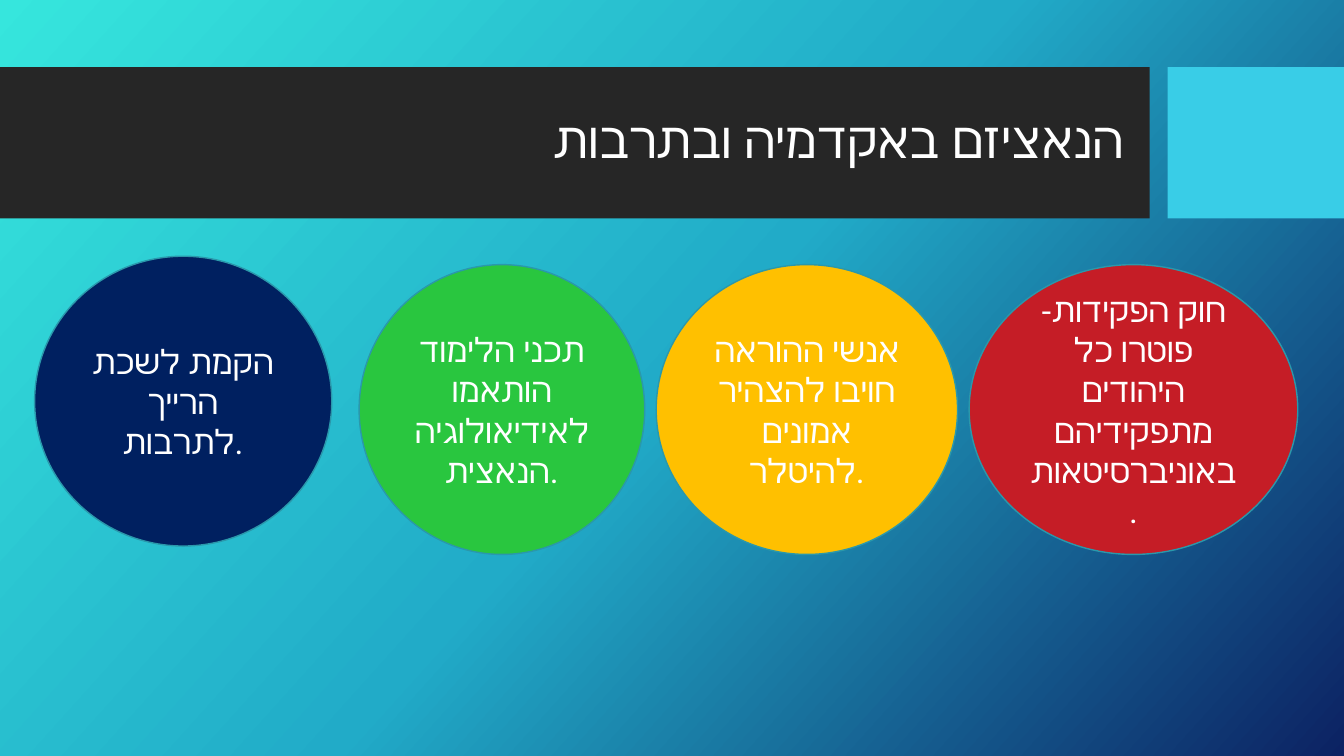
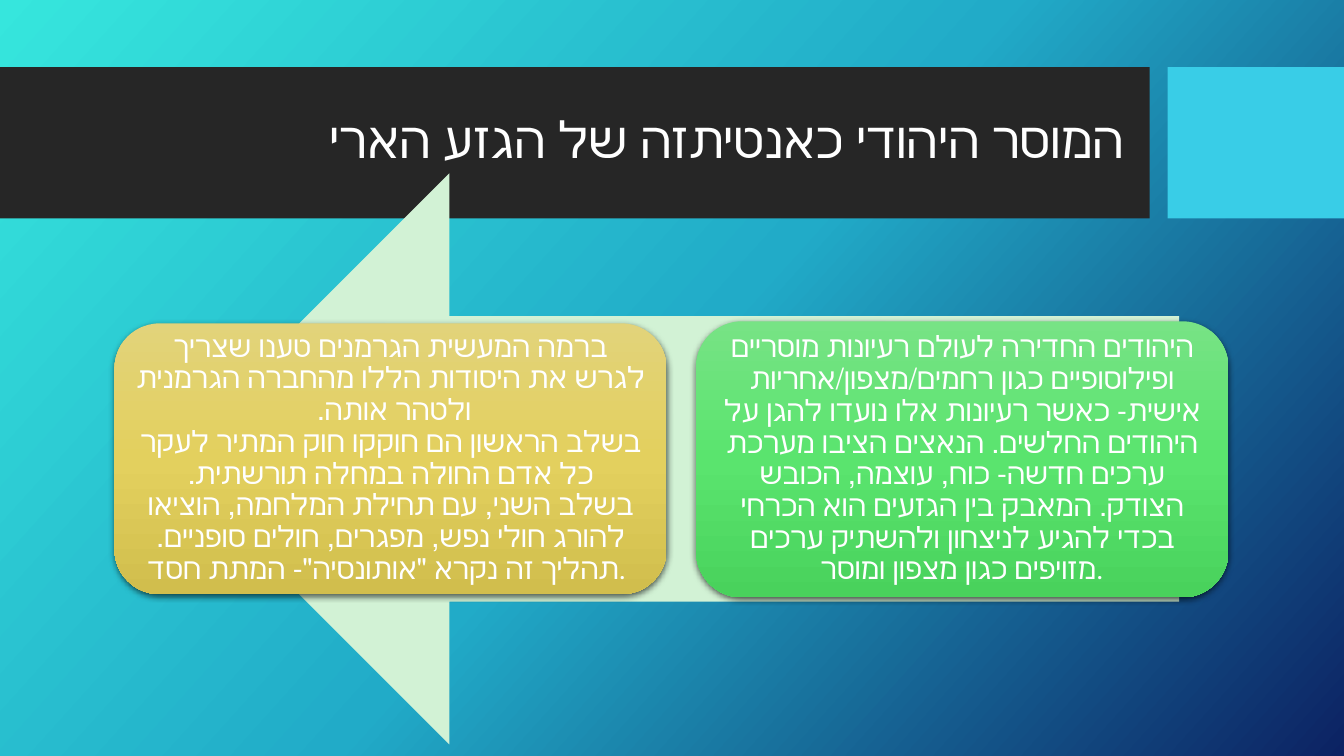
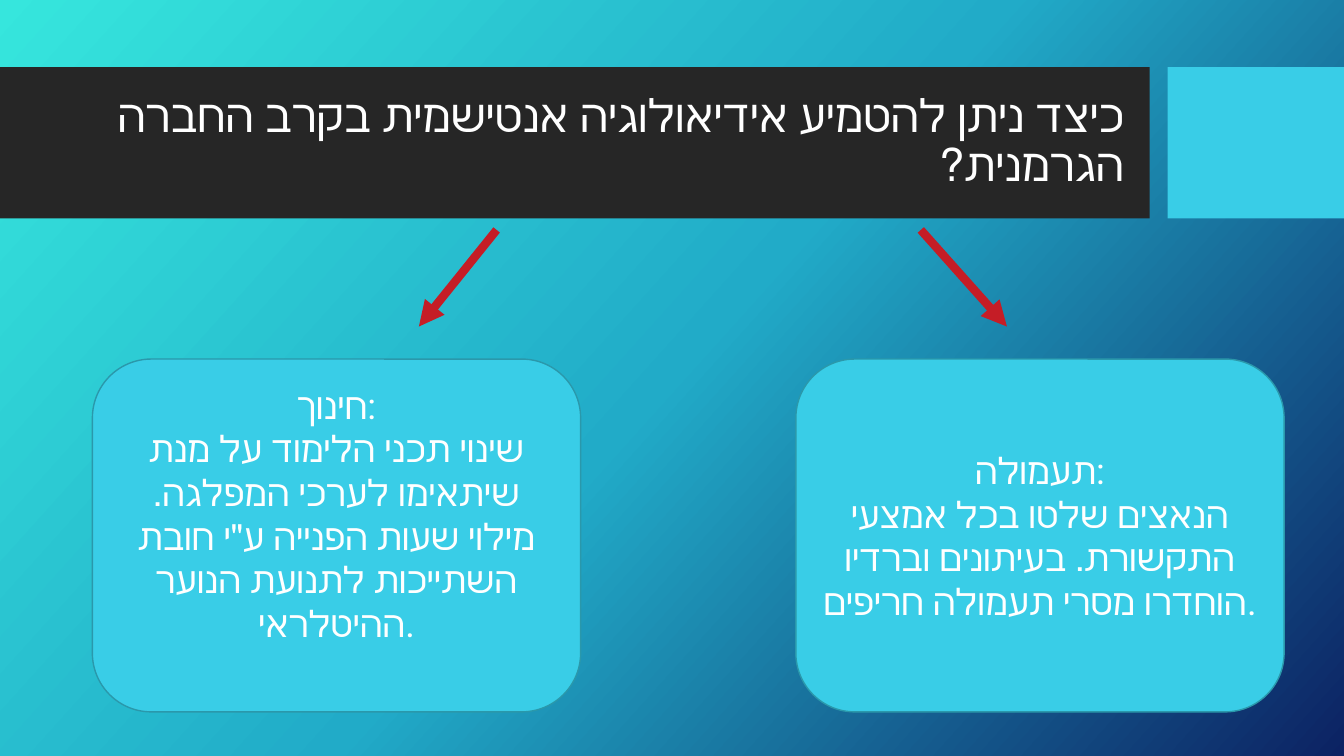
import copy
import pptx
import pptx.util
import pptx.dml.color
import pptx.enum.shapes
import pptx.enum.text
import pptx.oxml
import pptx.oxml.ns
import lxml.etree

RGB = pptx.dml.color.RGBColor
KIND = pptx.enum.shapes.MSO_SHAPE
ALIGN = pptx.enum.text.PP_ALIGN
MIDDLE = pptx.enum.text.MSO_ANCHOR.MIDDLE
qn = pptx.oxml.ns.qn

PX = 9525
FONT = "Roboto"
WHITE = RGB(0xFF, 0xFF, 0xFF)
DARK = RGB(0x26, 0x26, 0x26)
SKY = RGB(0x39, 0xCD, 0xE7)
TEAL = RGB(0x2A, 0x98, 0xAB)
RED = RGB(0xC5, 0x1D, 0x26)
AMBER = RGB(0xFF, 0xC0, 0x00)
GREEN = RGB(0x29, 0xC6, 0x3F)
NAVY = RGB(0x00, 0x20, 0x60)
MINT = RGB(0xD2, 0xF2, 0xD5)
BACK = [RGB(0x36, 0xE6, 0xDD), RGB(0x21, 0xAB, 0xC8), RGB(0x0C, 0x22, 0x63)]
LIME = [RGB(0x77, 0xE3, 0x85), RGB(0x5A, 0xE4, 0x6E), RGB(0x49, 0xD2, 0x5C)]
GOLD = [RGB(0xE2, 0xD3, 0x7A), RGB(0xE3, 0xD0, 0x5E), RGB(0xD1, 0xBE, 0x4D)]

BANDS = [((0, 64, 1095, 144), DARK), ((1112, 64, 168, 144), SKY)]
TITLE = (71, 79, 1009, 113)

CULTURE = ("הנאציזם באקדמיה ובתרבות", 36)
DISCS = [
    ((923, 252, 313, 276), RED,
     "חוק הפקידות- פוטרו כל היהודים מתפקידיהם באוניברסיטאות."),
    ((625, 252, 287, 276), AMBER,
     "אנשי ההוראה חויבו להצהיר אמונים להיטלר."),
    ((342, 252, 272, 276), GREEN,
     "תכני הלימוד הותאמו לאידיאולוגיה הנאצית."),
    ((33, 244, 283, 276), NAVY,
     "הקמת לשכת הרייך לתרבות."),
]

MORALS = ("המוסר היהודי כאנטיתזה של הגזע הארי", 36)
ARROW = (156, 165, 967, 544)
CARDS = [
    ((663, 306, 507, 263), LIME,
     "היהודים החדירה לעולם רעיונות מוסריים ופילוסופיים כגון "
     "רחמים/מצפון/אחריות אישית- כאשר רעיונות אלו נועדו להגן על "
     "היהודים החלשים. הנאצים הציבו מערכת ערכים חדשה- כוח, עוצמה, "
     "הכובש הצודק. המאבק בין הגזעים הוא הכרחי בכדי להגיע לניצחון "
     "ולהשתיק ערכים מזויפים כגון מצפון ומוסר."),
    ((109, 308, 526, 258), GOLD,
     "ברמה המעשית הגרמנים טענו שצריך לגרש את היסודות הללו מהחברה "
     "הגרמנית ולטהר אותה. \vבשלב הראשון הם חוקקו חוק המתיר לעקר כל "
     "אדם החולה במחלה תורשתית.\vבשלב השני, עם תחילת המלחמה, הוציאו "
     "להורג חולי נפש, מפגרים, חולים סופניים. תהליך זה נקרא "
     "\"אותונסיה\"- המתת חסד. "),
]

METHODS = ("כיצד ניתן להטמיע אידיאולוגיה אנטישמית בקרב החברה הגרמנית?", 32.4)
LINES = [(877, 219, 959, 311), (473, 219, 399, 311)]
BOXES = [
    ((758, 342, 465, 336), 5,
     "תעמולה:\nהנאצים שלטו בכל אמצעי התקשורת. בעיתונים וברדיו "
     "הוחדרו מסרי תעמולה חריפים."),
    ((88, 342, 465, 336), 46,
     "חינוך:\nשינוי תכני הלימוד על מנת שיתאימו לערכי המפלגה. מילוי "
     "שעות הפנייה ע\"י חובת השתייכות לתנועת הנוער ההיטלראי."),
]


def emu(box):
    return [n * PX for n in box]


def put(obj, **vals):
    for key, val in vals.items():
        setattr(obj, key, val)


def blend(fill, tones, angle):
    fill.gradient()
    fill.gradient_angle = 360 - angle
    first = fill.gradient_stops[0]._gs
    first.addnext(copy.deepcopy(first))
    for stop, tone, pos in zip(fill.gradient_stops, tones, (0, 0.5, 1)):
        stop.color.rgb = tone
        stop.position = pos


def write(frame, text, size, align=ALIGN.CENTER, space=None, **vals):
    put(frame, text=text, word_wrap=True, vertical_anchor=MIDDLE, **vals)
    for par in frame.paragraphs:
        put(par, alignment=align, line_spacing=space)
        for run in par.runs:
            put(run.font, name=FONT, size=pptx.util.Pt(size))
            run.font.color.rgb = WHITE


def draw(slide, kind, box, fill, edge=None):
    shape = slide.shapes.add_shape(kind, *emu(box))
    shape.shadow.inherit = False
    if isinstance(fill, list):
        blend(shape.fill, fill, 90)
    else:
        shape.fill.solid()
        shape.fill.fore_color.rgb = fill
    if edge is None:
        shape.line.fill.background()
    else:
        shape.line.color.rgb = edge
        shape.line.width = pptx.util.Pt(1)
    return shape


def shade(shape):
    glow = shape._element.spPr.find(qn("a:effectLst"))
    drop = lxml.etree.SubElement(
        glow, qn("a:outerShdw"), blurRad="57150", dist="19050",
        dir="5400000", algn="ctr", rotWithShape="0")
    tone = lxml.etree.SubElement(drop, qn("a:srgbClr"), val="000000")
    lxml.etree.SubElement(tone, qn("a:alpha"), val="63000")


def point(slide, ends):
    line = slide.shapes.add_connector(
        pptx.enum.shapes.MSO_CONNECTOR.STRAIGHT, *emu(ends))
    line.line.color.rgb = RED
    line.line.width = pptx.util.Pt(6)
    lxml.etree.SubElement(
        line.line._get_or_add_ln(), qn("a:tailEnd"), type="triangle")
    lxml.etree.SubElement(line._element.spPr, qn("a:effectLst"))


def start(deck, title):
    slide = deck.slides.add_slide(deck.slide_layouts[5])
    head = slide.shapes.title
    put(head, **dict(zip(("left", "top", "width", "height"), emu(TITLE))))
    write(head.text_frame, *title, align=ALIGN.RIGHT, space=0.9)
    head.text_frame.paragraphs[0]._p.get_or_add_pPr().set("rtl", "1")
    return slide


def theme(deck, slide):
    blend(deck.slide_master.background.fill, BACK, 42)
    tree = deck.slide_layouts[5].shapes._spTree
    for spot, (box, fill) in enumerate(BANDS, 2):
        band = draw(slide, KIND.RECTANGLE, box, fill)
        tree.insert(spot, band._element)


def main():
    deck = pptx.Presentation()
    put(deck, slide_width=1280 * PX, slide_height=720 * PX)

    slide = start(deck, CULTURE)
    theme(deck, slide)
    for box, fill, text in DISCS:
        disc = draw(slide, KIND.OVAL, box, fill, TEAL)
        write(disc.text_frame, text, 24)

    slide = start(deck, MORALS)
    draw(slide, KIND.LEFT_ARROW, ARROW, MINT)
    pad = {"margin_" + side: 8 * PX
           for side in ("left", "top", "right", "bottom")}
    for box, fill, text in CARDS:
        card = draw(slide, KIND.ROUNDED_RECTANGLE, box, fill)
        shade(card)
        write(card.text_frame, text, 21, space=0.9, **pad)

    slide = start(deck, METHODS)
    for ends in LINES:
        point(slide, ends)
    for box, foot, text in BOXES:
        card = draw(slide, KIND.ROUNDED_RECTANGLE, box, SKY, TEAL)
        write(card.text_frame, text, 26, margin_bottom=foot * PX)

    deck.save("out.pptx")


if __name__ == "__main__":
    main()
